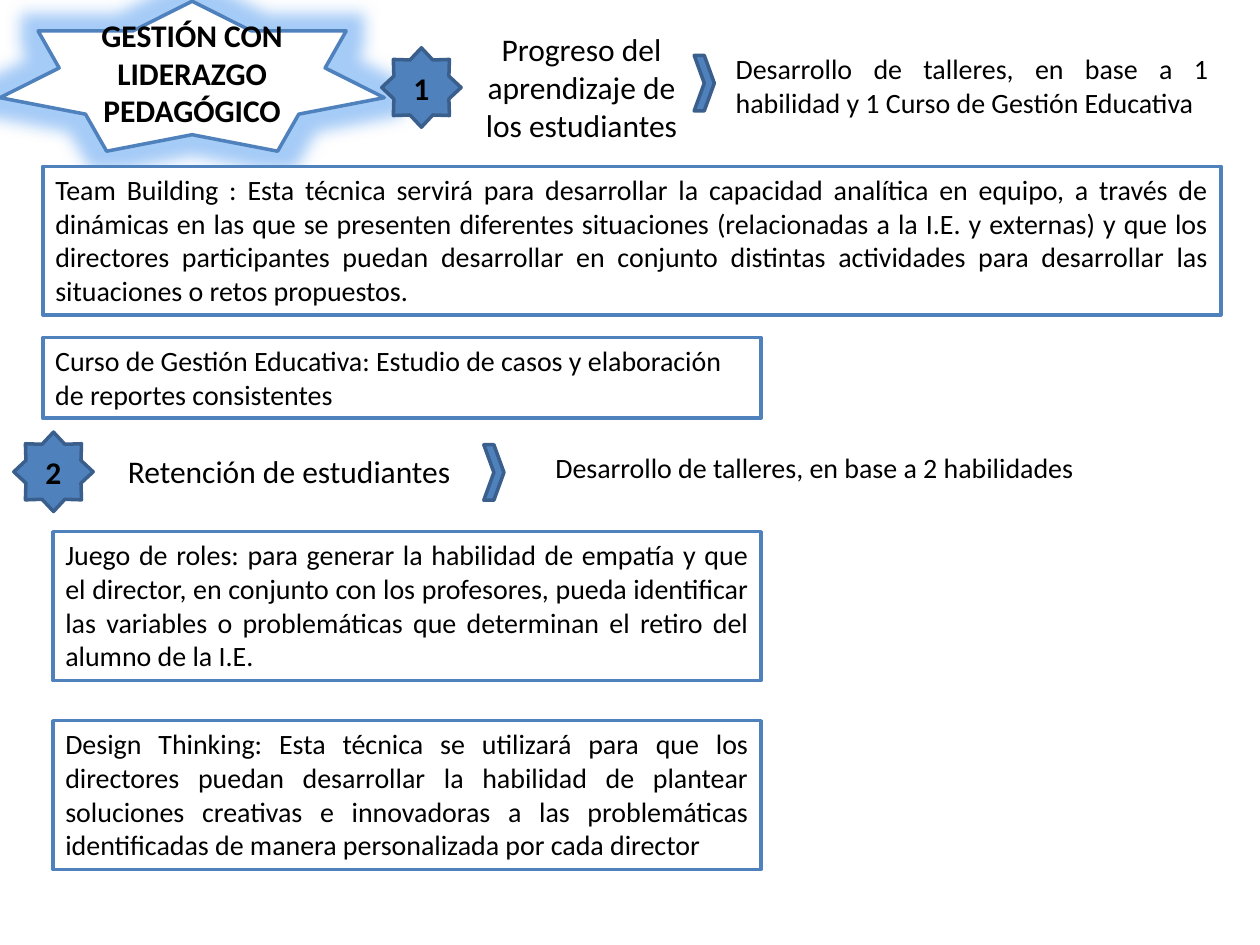
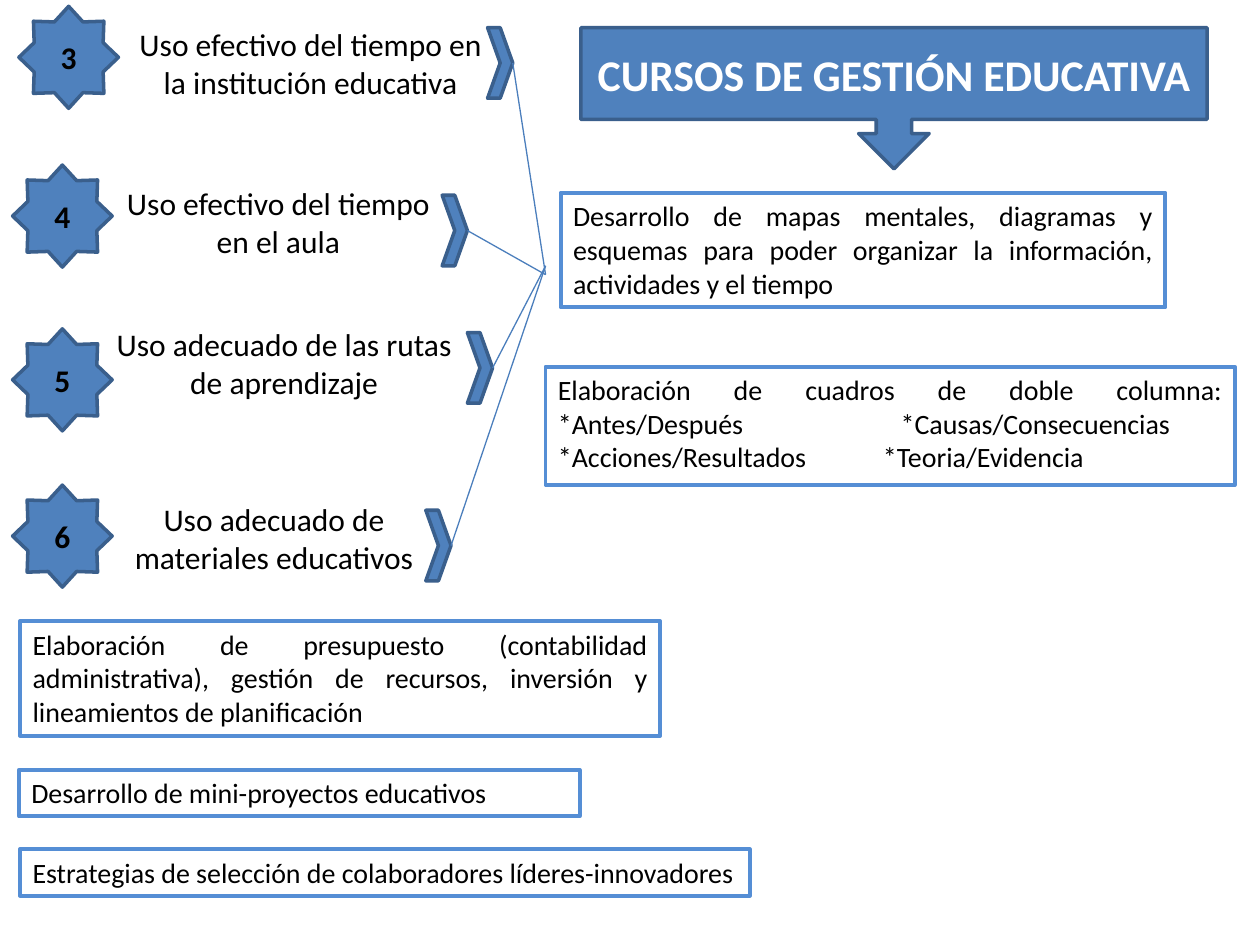
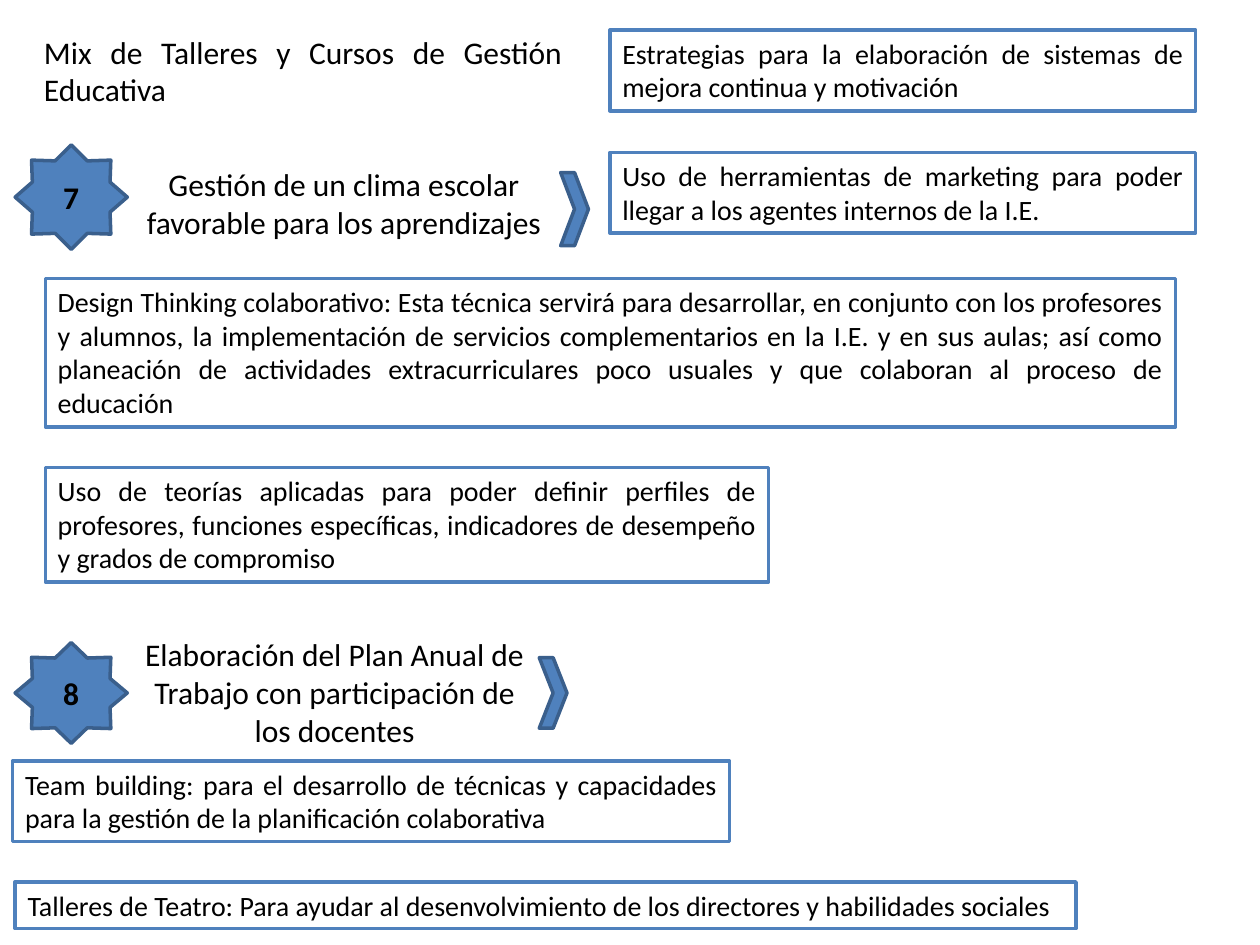
import pptx
import pptx.util
import pptx.dml.color
import pptx.enum.shapes
import pptx.enum.text
import pptx.oxml
import pptx.oxml.ns

Inches = pptx.util.Inches
Pt = pptx.util.Pt
Shape = pptx.enum.shapes.MSO_SHAPE
Align = pptx.enum.text.PP_ALIGN
Anchor = pptx.enum.text.MSO_ANCHOR

FONT = "Calibri"
BLUE = "4F81BD"
DARK_BLUE = "3A5F8C"
LIGHT_BLUE = "558ED5"
LINK_BLUE = "4B7EBC"
GLOW_BLUE = "1F7DEB"
WHITE = "FFFFFF"
BLACK = "000000"


def color(value):
    return pptx.dml.color.RGBColor.from_string(value)


def xml(parent, tag, **attributes):
    node = pptx.oxml.ns.qn(tag)
    child = parent.makeelement(node, attributes)
    parent.append(child)
    return child


def lengths(box):
    return [Inches(value) for value in box]


def inside(box, part):
    left, top, width, height = part
    return box[0] + left, box[1] + top, width, height


def write(shape, paragraphs, size=16, ink=BLACK, bold=False, align=Align.JUSTIFY, tabs=(), grow=True):
    frame = shape.text_frame
    frame.word_wrap = True
    frame.vertical_anchor = Anchor.TOP if grow else Anchor.MIDDLE
    if grow:
        frame.auto_size = pptx.enum.text.MSO_AUTO_SIZE.SHAPE_TO_FIT_TEXT
    for index, text in enumerate(paragraphs):
        para = frame.paragraphs[0] if index == 0 else frame.add_paragraph()
        para.alignment = align
        if tabs:
            stops = xml(para._p.get_or_add_pPr(), "a:tabLst")
            xml(stops, "a:tab", pos=str(Inches(tabs[index])), algn="l")
        span = para.add_run()
        span.text = text
        span.font.name = FONT
        span.font.size = Pt(size)
        span.font.bold = bold
        span.font.color.rgb = color(ink)


def figure(slide, kind, box, fill=BLUE, line=DARK_BLUE, weight=2):
    shape = slide.shapes.add_shape(kind, *lengths(box))
    shape.shadow.inherit = False
    if fill:
        shape.fill.solid()
        shape.fill.fore_color.rgb = color(fill)
    else:
        shape.fill.background()
    if line:
        shape.line.color.rgb = color(line)
        shape.line.width = Pt(weight)
    else:
        shape.line.fill.background()
    return shape


def label(slide, box, text, size=18, align=Align.CENTER):
    write(slide.shapes.add_textbox(*lengths(box)), [text], size, align=align)


def panel(slide, box, *paragraphs, fill=WHITE, line=BLUE, weight=2, **style):
    write(figure(slide, Shape.RECTANGLE, box, fill, line, weight), paragraphs, **style)


def course(slide, box, *paragraphs, **style):
    panel(slide, box, *paragraphs, fill=None, line=LIGHT_BLUE, weight=2.25, **style)


def topic(slide, box, number, text, text_part, chevron_part):
    star = figure(slide, Shape.STAR_8_POINT, box)
    write(star, [str(number)], 18, bold=True, align=Align.CENTER, grow=False)
    label(slide, inside(box, text_part), text)
    return figure(slide, Shape.CHEVRON, inside(box, chevron_part))


def link(slide, chevron, end):
    line = slide.shapes.add_connector(
        pptx.enum.shapes.MSO_CONNECTOR.STRAIGHT, 0, 0, *lengths(end))
    line.begin_connect(chevron, 3)
    line.line.color.rgb = color(LINK_BLUE)
    line.line.width = Pt(0.75)
    xml(line._element.spPr, "a:effectLst")


def heading_star(slide, box, text):
    star = figure(slide, Shape.STAR_7_POINT, box, WHITE, BLUE)
    effects = star._element.spPr.find(pptx.oxml.ns.qn("a:effectLst"))
    glow = xml(effects, "a:glow", rad=str(Inches(0.25)))
    tint = xml(glow, "a:srgbClr", val=GLOW_BLUE)
    xml(tint, "a:alpha", val="40000")
    write(star, [text], 18, bold=True, align=Align.CENTER, grow=False)


def leadership_slide(slide):
    heading_star(slide, (0, 0.01, 3.05, 1.19), "GESTIÓN CON LIDERAZGO PEDAGÓGICO")
    topic(slide, (3.03, 0.38, 0.63, 0.63), 1, "Progreso del aprendizaje de los estudiantes",
          (0.66, -0.19, 1.85, 1.01), (2.48, 0.06, 0.16, 0.44))
    topic(slide, (0.11, 3.43, 0.63, 0.63), 2, "Retención de estudiantes",
          (0.69, 0.11, 2.99, 0.4), (3.73, 0.1, 0.16, 0.44))
    panel(slide, (5.74, 0.36, 3.95, 0.64),
          "Desarrollo de talleres, en base a 1 habilidad y 1 Curso de Gestión Educativa", line=None)
    panel(slide, (0.34, 1.32, 9.35, 1.18),
          "Team Building : Esta técnica servirá para desarrollar la capacidad analítica en equipo, "
          "a través de dinámicas en las que se presenten diferentes situaciones (relacionadas a la "
          "I.E. y externas) y que los directores participantes puedan desarrollar en conjunto "
          "distintas actividades para desarrollar las situaciones o retos propuestos.")
    panel(slide, (0.34, 2.68, 5.7, 0.64),
          "Curso de Gestión Educativa: Estudio de casos y elaboración de reportes consistentes",
          align=Align.LEFT)
    panel(slide, (0.42, 4.22, 5.62, 1.18),
          "Juego de roles: para generar la habilidad de empatía y que el director, en conjunto con "
          "los profesores, pueda identificar las variables o problemáticas que determinan el retiro "
          "del alumno de la I.E.")
    panel(slide, (0.42, 5.72, 5.62, 1.18),
          "Design Thinking: Esta técnica se utilizará para que los directores puedan desarrollar la "
          "habilidad de plantear soluciones creativas e innovadoras a las problemáticas "
          "identificadas de manera personalizada por cada director")
    label(slide, (4.31, 3.53, 4.56, 0.37), "Desarrollo de talleres, en base a 2 habilidades",
          16, Align.LEFT)


def courses_slide(slide):
    topics = [
        (0.15, 0.05, "Uso efectivo del tiempo en la institución educativa",
         (0.81, 0.1, 3.01), (3.72, 0.17), 2.18),
        (0.1, 1.31, "Uso efectivo del tiempo en el aula",
         (0.78, 0.1, 2.66), (3.41, 0.24), 2.18),
        (0.1, 2.61, "Uso adecuado de las rutas de aprendizaje",
         (0.7, -0.08, 2.91), (3.61, 0.03), 2.11),
        (0.1, 3.85, "Uso adecuado de materiales educativos",
         (0.55, 0.07, 3.05), (3.28, 0.2), 2.11),
    ]
    for number, (left, top, text, text_part, chevron_part, end) in enumerate(topics, 3):
        chevron = topic(slide, (left, top, 0.79, 0.81), number, text,
                        (*text_part, 0.71), (*chevron_part, 0.2, 0.56))
        link(slide, chevron, (4.33, end))
    callout = figure(slide, Shape.DOWN_ARROW_CALLOUT, (4.61, 0.22, 4.97, 1.12))
    write(callout, ["CURSOS DE GESTIÓN EDUCATIVA"], 25, WHITE, True, Align.CENTER, grow=False)
    course(slide, (4.45, 1.53, 4.8, 0.91),
           "Desarrollo de mapas mentales, diagramas y esquemas para poder organizar la "
           "información, actividades y el tiempo")
    course(slide, (4.33, 2.91, 5.47, 0.94),
           "Elaboración de cuadros de doble columna: *Antes/Después\t*Causas/Consecuencias",
           "*Acciones/Resultados\t*Teoria/Evidencia", tabs=(2.72, 2.58))
    course(slide, (0.16, 4.93, 5.08, 0.91),
           "Elaboración de presupuesto (contabilidad administrativa), gestión de recursos, "
           "inversión y lineamientos de planificación")
    course(slide, (0.15, 6.11, 4.45, 0.37), "Desarrollo de mini-proyectos educativos")
    course(slide, (0.16, 6.74, 5.79, 0.37),
           "Estrategias de selección de colaboradores líderes-innovadores")


def mixed_slide(slide):
    topic(slide, (0.12, 1.15, 0.89, 0.83), 7,
          "Gestión de un clima escolar favorable para los aprendizajes",
          (0.89, 0.11, 3.44, 0.71), (4.33, 0.22, 0.22, 0.58))
    topic(slide, (0.12, 5.1, 0.89, 0.8), 8,
          "Elaboración del Plan Anual de Trabajo con participación de los docentes",
          (0.89, -0.11, 3.29, 1.01), (4.16, 0.12, 0.22, 0.56))
    panel(slide, (0.25, 0.21, 4.31, 0.71), "Mix de Talleres y Cursos de Gestión Educativa",
          line=None, size=18)
    panel(slide, (4.84, 0.24, 4.65, 0.64),
          "Estrategias para la elaboración de sistemas de mejora continua y motivación")
    panel(slide, (4.84, 1.21, 4.65, 0.64),
          "Uso de herramientas de marketing para poder llegar a los agentes internos de la I.E.")
    panel(slide, (0.36, 2.21, 8.97, 1.18),
          "Design Thinking colaborativo: Esta técnica servirá para desarrollar, en conjunto con los "
          "profesores y alumnos, la implementación de servicios complementarios en la I.E. y en sus "
          "aulas; así como planeación de actividades extracurriculares poco usuales y que colaboran "
          "al proceso de educación")
    panel(slide, (0.36, 3.71, 5.74, 0.91),
          "Uso de teorías aplicadas para poder definir perfiles de profesores, funciones "
          "específicas, indicadores de desempeño y grados de compromiso")
    panel(slide, (0.1, 6.04, 5.69, 0.64),
          "Team building: para el desarrollo de técnicas y capacidades para la gestión de la "
          "planificación colaborativa")
    panel(slide, (0.12, 7, 8.42, 0.37),
          "Talleres de Teatro: Para ayudar al desenvolvimiento de los directores y habilidades "
          "sociales")


def main():
    deck = pptx.Presentation()
    deck.slide_width = Inches(10)
    deck.slide_height = Inches(7.5)
    for build in (leadership_slide, courses_slide, mixed_slide):
        page = deck.slides.add_slide(deck.slide_layouts[6])
        build(page)
    deck.save("out.pptx")


if __name__ == "__main__":
    main()
